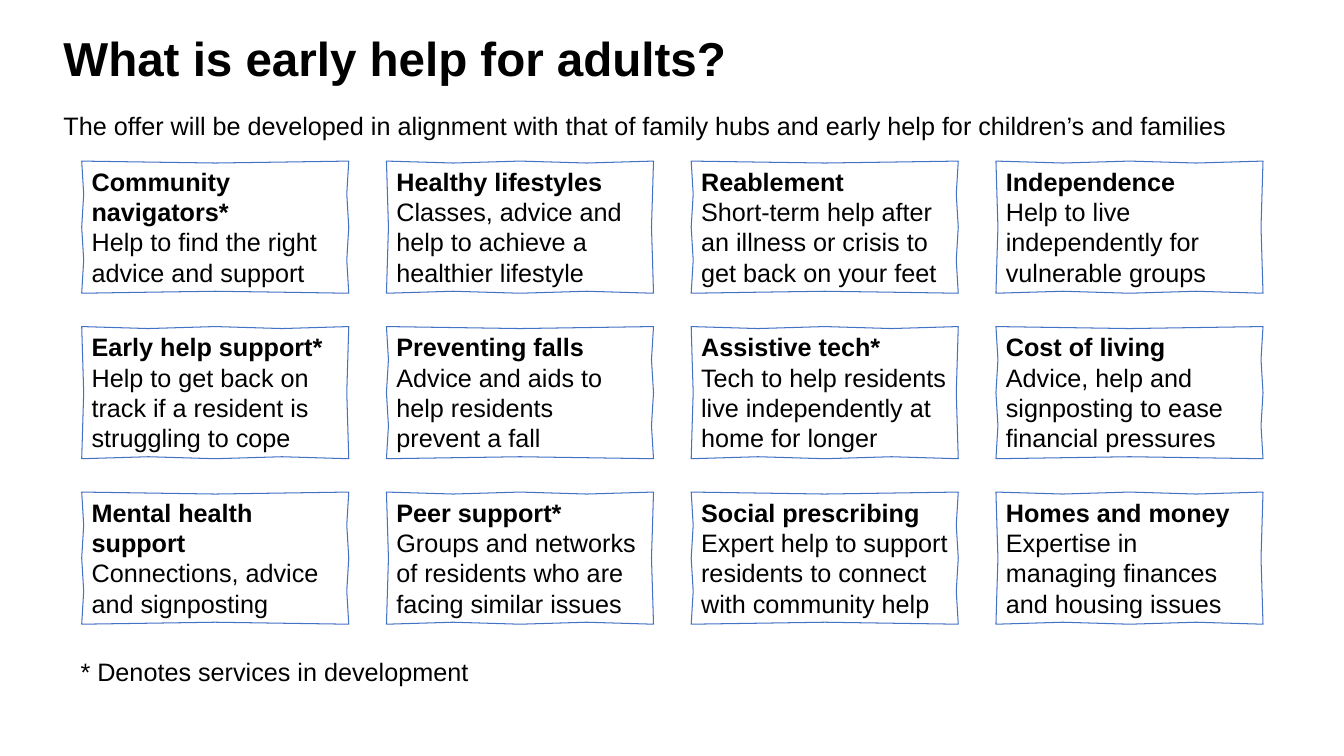
import math

from pptx import Presentation
from pptx import util as u
from pptx.dml import color
from pptx.enum import text

FONT = "Arial"
BLACK = "000000"
OUTLINE = "4472C4"

CARD_WIDTH, CARD_HEIGHT = 6.73, 3.33
FIRST_LEFT, FIRST_TOP = 2.06, 4.06
COLUMN_STEP, ROW_STEP = 7.68, 4.17
WOBBLE = 0.05
EDGE_STEPS = 4

SERVICES = [
    [
        ("Community navigators*", "Help to find the right advice and support"),
        ("Healthy lifestyles", "Classes, advice and help to achieve a healthier lifestyle"),
        ("Reablement", "Short-term help after an illness or crisis to get back on your feet"),
        ("Independence", "Help to live independently for vulnerable groups"),
    ],
    [
        ("Early help support*", "Help to get back on track if a resident is struggling to cope"),
        ("Preventing falls", "Advice and aids to help residents prevent a fall"),
        ("Assistive tech*", "Tech to help residents live independently at home for longer"),
        ("Cost of living", "Advice, help and signposting to ease financial pressures"),
    ],
    [
        ("Mental health support", "Connections, advice and signposting"),
        ("Peer support*", "Groups and networks of residents who are facing similar issues"),
        ("Social prescribing", "Expert help to support residents to connect with community help"),
        ("Homes and money", "Expertise in managing finances and housing issues"),
    ],
]


def set_color(target, hex_value):
    target.rgb = color.RGBColor.from_string(hex_value)


def add_run(paragraph, words, size=18, bold=False):
    paragraph.alignment = text.PP_ALIGN.LEFT
    run = paragraph.add_run()
    run.text = words
    run.font.name = FONT
    run.font.size = u.Pt(size)
    run.font.bold = bold
    set_color(run.font.color, BLACK)


def set_frame(frame, wrap):
    frame.word_wrap = wrap
    frame.auto_size = text.MSO_AUTO_SIZE.NONE
    frame.vertical_anchor = text.MSO_ANCHOR.TOP
    frame.margin_left = frame.margin_right = u.Cm(0.25)
    frame.margin_top = frame.margin_bottom = u.Cm(0.13)


def add_title(slide, words):
    title = slide.shapes.title
    title.left, title.top = u.Cm(1.35), u.Cm(0.61)
    title.width, title.height = u.Cm(32.08), u.Cm(1.7)
    set_frame(title.text_frame, True)
    add_run(title.text_frame.paragraphs[0], words, 34, True)


def add_line_of_text(slide, words, left, top, width):
    box = slide.shapes.add_textbox(u.Cm(left), u.Cm(top), u.Cm(width), u.Cm(1.02))
    set_frame(box.text_frame, False)
    add_run(box.text_frame.paragraphs[0], words)


def wavy_outline(left, top, seed):
    right, bottom = left + CARD_WIDTH, top + CARD_HEIGHT
    corners = [(left, top), (right, top), (right, bottom), (left, bottom)]
    inward = [(0, 1), (-1, 0), (0, -1), (1, 0)]
    points = []
    for side, (x, y) in enumerate(corners):
        end_x, end_y = corners[(side + 1) % 4]
        waves = 1 + (seed + side) % 2
        for step in range(EDGE_STEPS):
            part = step / EDGE_STEPS
            depth = WOBBLE * math.sin(math.pi * waves * part) ** 2
            points.append((
                u.Cm(x + (end_x - x) * part + inward[side][0] * depth),
                u.Cm(y + (end_y - y) * part + inward[side][1] * depth),
            ))
    return points


def add_card(slide, left, top, seed, service, summary):
    start, *rest = wavy_outline(left, top, seed)
    builder = slide.shapes.build_freeform(*start)
    builder.add_line_segments(rest, close=True)
    card = builder.convert_to_shape()
    card.shadow.inherit = False
    card.fill.background()
    card.line.width = u.Pt(0.75)
    set_color(card.line.color, OUTLINE)
    set_frame(card.text_frame, True)
    add_run(card.text_frame.paragraphs[0], service, bold=True)
    add_run(card.text_frame.add_paragraph(), summary)


def main():
    deck = Presentation()
    deck.slide_width, deck.slide_height = u.Cm(33.87), u.Cm(19.05)
    slide = deck.slides.add_slide(deck.slide_layouts.get_by_name("Title Only"))
    add_title(slide, "What is early help for adults?")
    add_line_of_text(
        slide,
        "The offer will be developed in alignment with that of family hubs "
        "and early help for children’s and families",
        1.35, 2.64, 29.92,
    )
    for row, services in enumerate(SERVICES):
        for column, (service, summary) in enumerate(services):
            add_card(
                slide,
                FIRST_LEFT + column * COLUMN_STEP,
                FIRST_TOP + row * ROW_STEP,
                row + column, service, summary,
            )
    add_line_of_text(slide, "* Denotes services in development", 1.78, 16.41, 10.39)
    deck.save("out.pptx")


if __name__ == "__main__":
    main()
